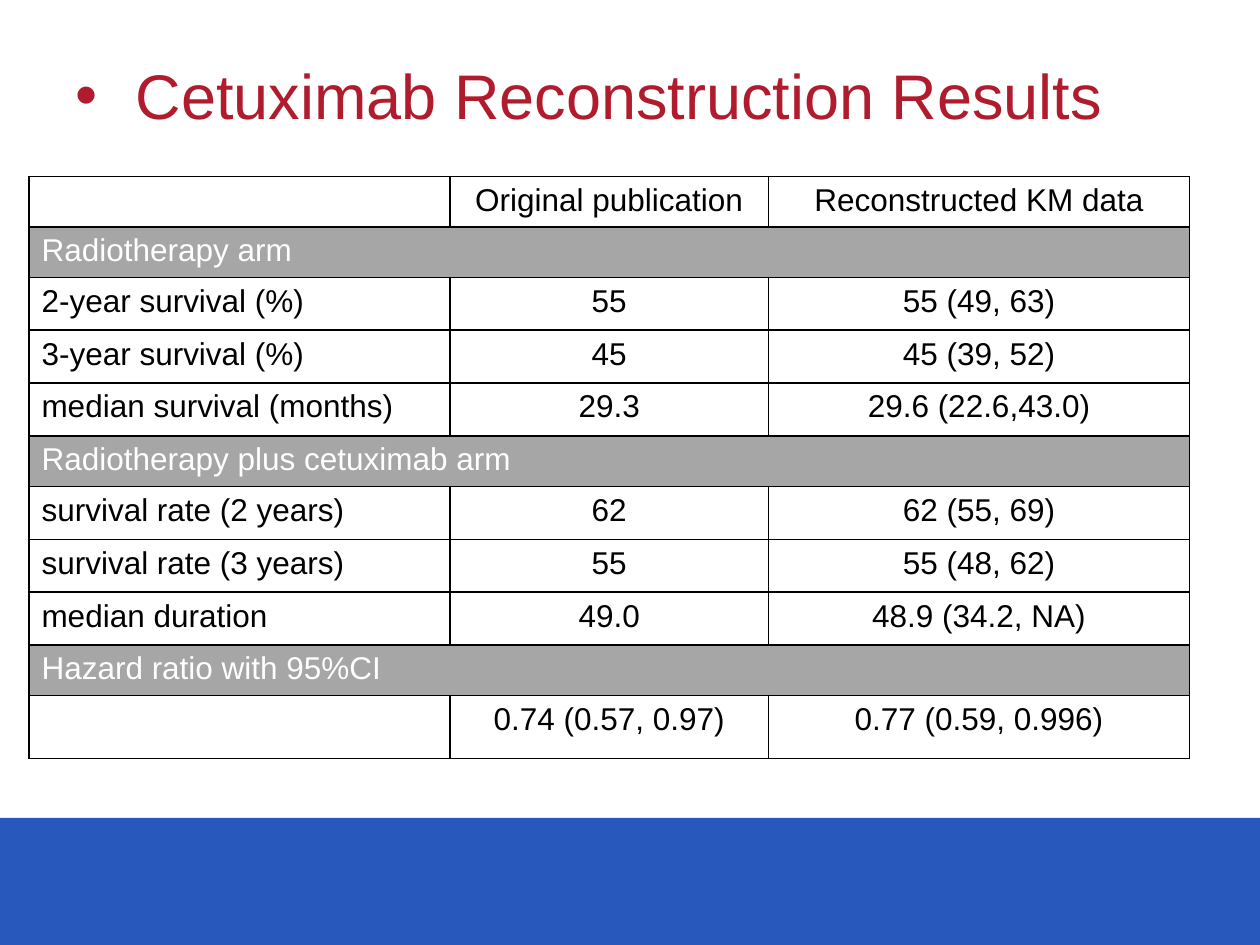
from dataclasses import dataclass

import pptx
import pptx.dml.color
import pptx.enum.shapes
import pptx.enum.text
import pptx.oxml
import pptx.oxml.ns
import pptx.util
from pptx.util import Inches

FONT = "Arial"
BLACK, WHITE, GREY = "000000", "FFFFFF", "A6A6A6"
BLUE, RED = "2858BB", "B01C2E"
ALIGN = pptx.enum.text.PP_ALIGN


@dataclass
class Row:
    height: float
    label: str
    published: str = ""
    reconstructed: str = ""
    section: bool = False


COLUMN_WIDTHS = (3.34, 2.53, 3.34)
ROWS = (
    Row(0.38, "", "Original publication", "Reconstructed KM data"),
    Row(0.38, "Radiotherapy arm", section=True),
    Row(0.42, "2-year survival (%)", "55", "55 (49, 63)"),
    Row(0.42, "3-year survival (%)", "45", "45 (39, 52)"),
    Row(0.42, "median survival (months)", "29.3", "29.6 (22.6,43.0)"),
    Row(0.38, "Radiotherapy plus cetuximab arm", section=True),
    Row(0.42, "survival rate (2 years)", "62", "62 (55, 69)"),
    Row(0.42, "survival rate (3 years)", "55", "55 (48, 62)"),
    Row(0.42, "median duration", "49.0", "48.9 (34.2, NA)"),
    Row(0.38, "Hazard ratio with 95%CI", section=True),
    Row(0.5, "", "0.74 (0.57, 0.97)", "0.77 (0.59, 0.996)"),
)


def rgb(color: str) -> pptx.dml.color.RGBColor:
    return pptx.dml.color.RGBColor.from_string(color)


def fill_solid(fill, color: str) -> None:
    fill.solid()
    fill.fore_color.rgb = rgb(color)


def write(para, text: str, size: float, color: str) -> None:
    span = para.add_run()
    span.text = text
    formats = {"name": FONT, "size": pptx.util.Pt(size), "bold": False}
    for name, value in formats.items():
        setattr(span.font, name, value)
    span.font.color.rgb = rgb(color)


def add_band(page) -> None:
    band = page.shapes.add_shape(
        pptx.enum.shapes.MSO_SHAPE.RECTANGLE, 0, Inches(6.49), Inches(10), Inches(1.01)
    )
    band.shadow.inherit = False
    fill_solid(band.fill, BLUE)
    band.line.fill.background()


def add_title(page) -> None:
    box = page.shapes.add_textbox(Inches(0.5), 0, Inches(9), Inches(1.5))
    box.text_frame.word_wrap = True
    box.text_frame.vertical_anchor = pptx.enum.text.MSO_ANCHOR.MIDDLE
    para = box.text_frame.paragraphs[0]
    properties = para._p.get_or_add_pPr()
    properties.set("marL", str(Inches(0.48)))
    properties.set("indent", str(Inches(-0.48)))
    namespace = pptx.oxml.ns.nsdecls("a")
    for bullet in (f'<a:buFont {namespace} typeface="{FONT}"/>',
                   f'<a:buChar {namespace} char="•"/>'):
        properties.append(pptx.oxml.parse_xml(bullet))
    write(para, "Cetuximab Reconstruction Results", 36, RED)


def add_borders(cell) -> None:
    """Draw a one-point black line on every side; call before filling the cell."""
    for side in ("lnL", "lnR", "lnT", "lnB"):
        cell._tc.get_or_add_tcPr().append(pptx.oxml.parse_xml(
            f'<a:{side} {pptx.oxml.ns.nsdecls("a")} w="{pptx.util.Pt(1)}">'
            f'<a:solidFill><a:srgbClr val="{BLACK}"/></a:solidFill></a:{side}>'
        ))


def add_results(page) -> None:
    table = page.shapes.add_table(
        len(ROWS), len(COLUMN_WIDTHS), Inches(0.23), Inches(1.4),
        Inches(sum(COLUMN_WIDTHS)), Inches(sum(row.height for row in ROWS)),
    ).table
    table.first_row = table.horz_banding = False
    for column, width in zip(table.columns, COLUMN_WIDTHS):
        column.width = Inches(width)
    for row_index, row in enumerate(ROWS):
        table.rows[row_index].height = Inches(row.height)
        texts = (row.label, row.published, row.reconstructed)
        for column_index, text in enumerate(texts):
            cell = table.cell(row_index, column_index)
            add_borders(cell)
            fill_solid(cell.fill, GREY if row.section else WHITE)
            para = cell.text_frame.paragraphs[0]
            para.alignment = ALIGN.CENTER if column_index else ALIGN.LEFT
            if text:
                write(para, text, 18, WHITE if row.section else BLACK)
        if row.section:
            table.cell(row_index, 0).merge(table.cell(row_index, len(texts) - 1))


def main() -> None:
    deck = pptx.Presentation()
    deck.slide_width, deck.slide_height = Inches(10), Inches(7.5)
    page = deck.slides.add_slide(deck.slide_layouts[6])
    add_band(page)
    add_title(page)
    add_results(page)
    deck.save("out.pptx")


if __name__ == "__main__":
    main()
